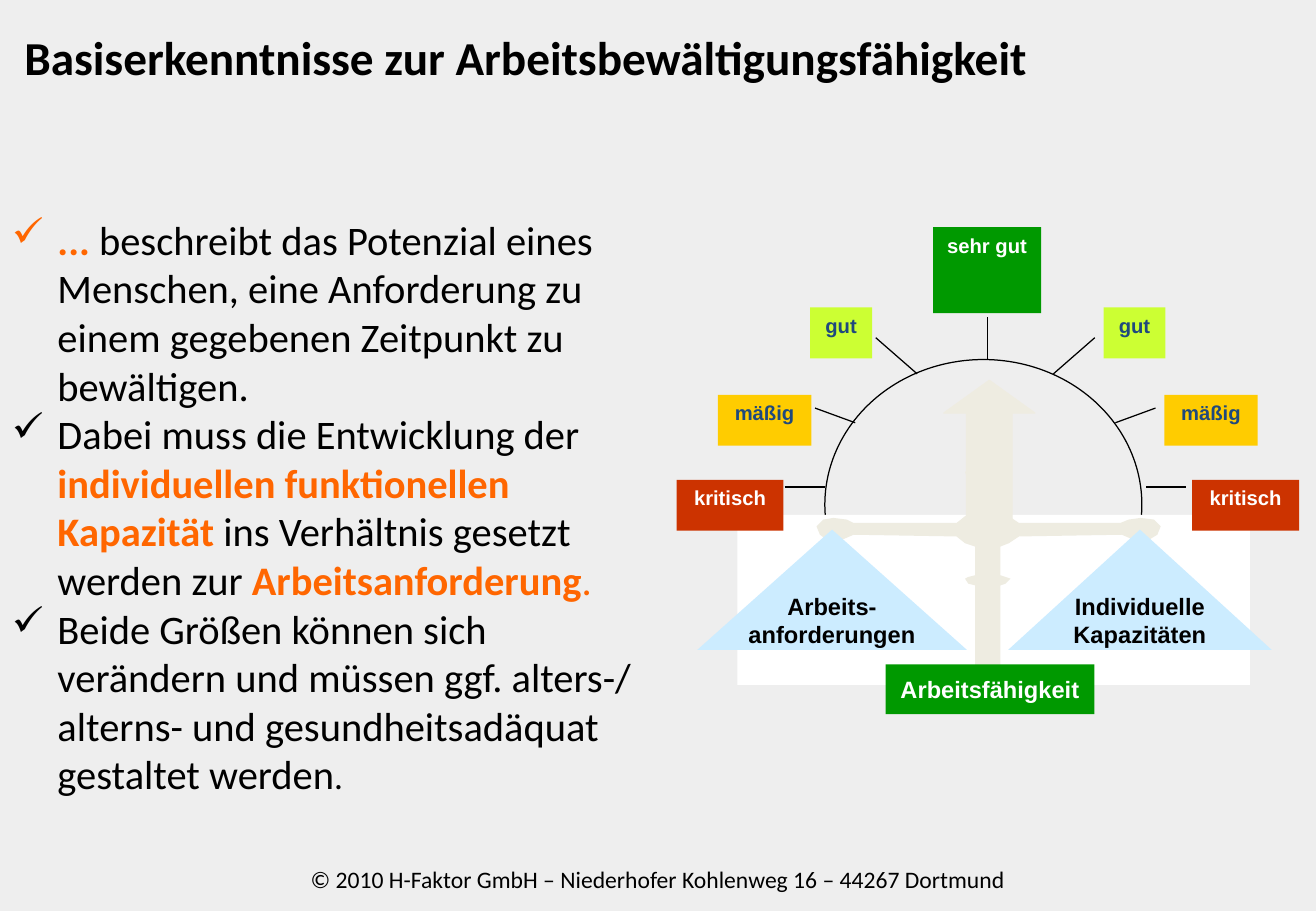
from lxml import etree
from pptx import Presentation
from pptx.dml.color import RGBColor
from pptx.enum import shapes, text
from pptx.oxml import ns
from pptx.util import Pt

BLACK, WHITE, ORANGE, NAVY = "000000", "FFFFFF", "FF6600", "1F497D"
GREEN, BEIGE, PALE_BLUE = "009900", "EEECE1", "CCECFF"
SHAPE, ANCHOR, ALIGN = shapes.MSO_SHAPE, text.MSO_ANCHOR, text.PP_ALIGN

STATEMENTS = [
    [("...", ORANGE, True, 24),
     (" beschreibt das Potenzial eines Menschen, eine Anforderung zu einem "
      "gegebenen Zeitpunkt zu bewältigen.", BLACK, False, 24)],
    [("Dabei muss die Entwicklung der ", BLACK, False, 24),
     ("individuellen funktionellen Kapazität", ORANGE, True, 24),
     (" ins Verhältnis gesetzt werden zur ", BLACK, False, 24),
     ("Arbeitsanforderung", ORANGE, True, 24),
     (".", ORANGE, False, 24)],
    [("Beide Größen können sich verändern und müssen ggf. alters-/ alterns- "
      "und gesundheitsadäquat gestaltet werden", BLACK, False, 24),
     (".", BLACK, False, 21)],
]

# label, fill, font colour, left, top, width, tick start, tick end (left half)
RATINGS = [
    ("kritisch", "CC3300", WHITE, 0, 149.8, 63.4, (64.1, 154.1), (87.9, 154.1)),
    ("mäßig", "FFCC00", NAVY, 24.5, 99.4, 55.4, (82.1, 107.3), (105.9, 116)),
    ("gut", "CCFF33", NAVY, 79.2, 47.6, 36.7, (118.1, 65.6), (142.6, 87)),
]

# Right half of the scales, from the top ring to the foot, relative to the axis
SCALES_HALF = [
    (3, 0), (9, 1.5), (13.2, 6.5), (11, 10.5), (7.2, 13), (7.2, 29.5),
    (13, 32.5), (18.7, 36), (79, 36.7), (83.5, 34.3), (91, 33.6), (98, 34.5),
    (102, 38.9), (100, 43.2), (95.5, 46.5), (126, 85), (132, 90.7),
    (144, 90.7), (140, 95), (126, 99.5), (97, 102), (60, 99), (48, 96),
    (37, 90.7), (49.5, 90.7), (57, 85), (86.7, 46.5), (79.5, 43.2),
    (18.7, 44.6), (13, 48), (7.2, 50.4), (7.2, 67), (11, 68), (13.2, 69.8),
    (11, 72), (7.2, 73.4), (7.2, 121.5), (12, 122), (16, 126.7), (29, 126.7),
    (34, 131), (45, 131), (52, 133), (54, 140.4),
]


def color(hex_value):
    return RGBColor.from_string(hex_value)


def style_run(run, font, size, hex_value, bold):
    run.font.name, run.font.size, run.font.bold = font, Pt(size), bold
    run.font.color.rgb = color(hex_value)


def paint(part, fill=None, line=None):
    part.shadow.inherit = False
    if fill:
        part.fill.solid()
        part.fill.fore_color.rgb = color(fill)
    else:
        part.fill.background()
    if line:
        part.line.color.rgb = color(line)
        part.line.width = Pt(0.75)
    else:
        part.line.fill.background()


def add_part(slide, kind, box, fill=None, line=None):
    part = slide.shapes.add_shape(kind, *map(Pt, box))
    paint(part, fill, line)
    return part


def add_label(part, label, size, hex_value, anchor=ANCHOR.MIDDLE, wrap=False):
    frame = part.text_frame
    frame.text = label
    frame.word_wrap = wrap
    frame.vertical_anchor = anchor
    frame.paragraphs[0].alignment = ALIGN.CENTER
    for run in frame.paragraphs[0].runs:
        style_run(run, "Arial", size, hex_value, True)


def add_tick(slide, start, end):
    tick = slide.shapes.add_connector(
        shapes.MSO_CONNECTOR.STRAIGHT, *map(Pt, (*start, *end)))
    tick.line.color.rgb = color(BLACK)
    tick.line.width = Pt(0.75)
    etree.SubElement(tick._element.spPr, ns.qn("a:effectLst"))


def add_heading(slide, box, wording, size, bold, align, anchor):
    frame = slide.shapes.add_textbox(*map(Pt, box)).text_frame
    frame.text = wording
    frame.word_wrap = True
    frame.vertical_anchor = anchor
    frame.margin_left = frame.margin_right = Pt(8.64)
    frame.margin_top = frame.margin_bottom = Pt(4.32)
    frame.paragraphs[0].alignment = align
    style_run(frame.paragraphs[0].runs[0], "Calibri", size, BLACK, bold)


def add_statements(slide, box):
    frame = slide.shapes.add_textbox(*map(Pt, box)).text_frame
    frame.word_wrap = True
    for index, statement in enumerate(STATEMENTS):
        paragraph = frame.add_paragraph() if index else frame.paragraphs[0]
        # Hanging check mark
        properties = paragraph._p.get_or_add_pPr()
        properties.set("marL", str(Pt(27)))
        properties.set("indent", str(-Pt(27)))
        etree.SubElement(properties, ns.qn("a:buChar"), char="✓")
        for wording, hex_value, bold, size in statement:
            run = paragraph.add_run()
            run.text = wording
            style_run(run, "Calibri", size, hex_value, bold)


def add_scales(slide, axis, top):
    outline = [(axis + x, top + y) for x, y in SCALES_HALF]
    outline += [(axis - x, top + y) for x, y in reversed(SCALES_HALF)]
    builder = slide.shapes.build_freeform(*outline[0], scale=Pt(1))
    builder.add_line_segments(outline[1:], close=True)
    paint(builder.convert_to_shape(), BEIGE)


def add_balance(slide, box):
    left, top, width, _ = box

    def place(x, y, *size):
        return (left + x, top + y, *size)

    # Dial, backdrop, scales and pointer
    add_part(slide, SHAPE.OVAL, place(87.9, 78.5, 187.9, 172.1), line=BLACK)
    add_part(slide, SHAPE.RECTANGLE, place(36, 170.7, 303.8, 100.8), WHITE)
    add_scales(slide, left + width / 2, top + 139)
    pointer = add_part(slide, SHAPE.UP_ARROW, place(158.4, 90.8, 54, 92.2), BEIGE, BEIGE)
    pointer.adjustments[0], pointer.adjustments[1] = 0.5, 0.36

    # Weights on both pans
    for label, x, pan_width in (("Arbeits-\vanforderungen", 12.3, 159.8),
                                ("Individuelle\vKapazitäten", 196.6, 156.2)):
        weight = add_part(slide, SHAPE.ISOSCELES_TRIANGLE,
                          place(x, 179.3, pan_width, 71.3), PALE_BLUE)
        add_label(weight, label, 14, BLACK)

    # Ratings mirrored on both sides; the dial sits slightly left of the axis
    tick_mirror = width - 3
    for label, fill, font_color, x, y, w, start, end in RATINGS:
        for rating_x in (x, width - x - w):
            rating = add_part(slide, SHAPE.RECTANGLE, place(rating_x, y, w, 30.2), fill)
            add_label(rating, label, 12, font_color, ANCHOR.TOP)
        add_tick(slide, place(*start), place(*end))
        add_tick(slide, place(tick_mirror - start[0], start[1]),
                 place(tick_mirror - end[0], end[1]))

    # Best rating and base
    best = add_part(slide, SHAPE.RECTANGLE, place(152, 0, 64.1, 51.1), GREEN)
    add_label(best, "sehr gut", 12, WHITE, ANCHOR.TOP, True)
    add_tick(slide, place(184.4, 78.5), place(184.4, 53.3))
    base = add_part(slide, SHAPE.RECTANGLE, place(123.9, 259.2, 123.8, 29.5), GREEN)
    add_label(base, "Arbeitsfähigkeit", 14, WHITE)


def main():
    deck = Presentation()
    deck.slide_width, deck.slide_height = Pt(780), Pt(540)
    slide = deck.slides.add_slide(deck.slide_layouts[6])
    slide.background.fill.solid()
    slide.background.fill.fore_color.rgb = color("EEEEEE")

    add_heading(slide, (0, 508.3, 780, 25.2),
                "© 2010 H-Faktor GmbH – Niederhofer Kohlenweg 16 – 44267 Dortmund",
                14, False, ALIGN.CENTER, ANCHOR.TOP)
    add_heading(slide, (5.8, 12.2, 702, 42.5),
                "Basiserkenntnisse zur Arbeitsbewältigungsfähigkeit",
                28, True, ALIGN.LEFT, ANCHOR.BOTTOM)
    add_statements(slide, (0, 123.8, 401, 356.4))
    add_balance(slide, (401, 134.6, 369, 289))
    deck.save("out.pptx")


if __name__ == "__main__":
    main()
